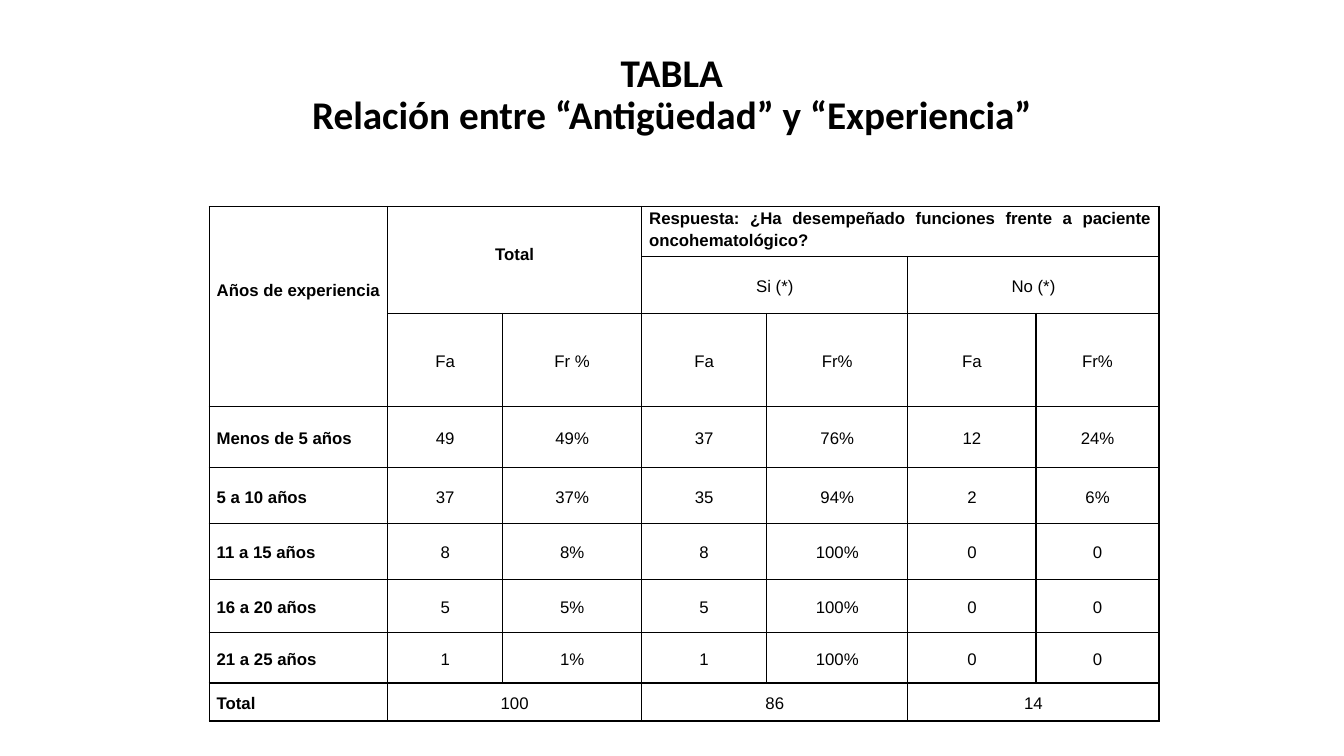
from lxml import etree
from pptx import Presentation
from pptx.dml.color import RGBColor
from pptx.enum.text import MSO_ANCHOR, PP_ALIGN
from pptx.oxml.ns import qn
from pptx.util import Cm, Pt

CENTER, JUSTIFY = PP_ALIGN.CENTER, PP_ALIGN.JUSTIFY
MIDDLE, TOP = MSO_ANCHOR.MIDDLE, MSO_ANCHOR.TOP
COLORS = {"ink": "000000"}

TITLE = "TABLA\vRelación entre “Antigüedad” y “Experiencia”"
TITLE_FONT = {"name": "Calibri", "size": Pt(28), "bold": True}
CELL_FONT = {"name": "Arial", "size": Pt(12)}
CELL_MARGINS = {"margin_left": Cm(0.19), "margin_right": Cm(0.19),
                "margin_top": 0, "margin_bottom": 0}

COLUMN_WIDTHS = [4.5, 2.9, 3.5, 3.15, 3.56, 3.23, 3.1]
ROW_HEIGHTS = [1.26, 1.44, 2.35, 1.54, 1.41, 1.4, 1.34, 1.27, 0.96]
ROWS = [
    ["Años de experiencia", "Total", "",
     "Respuesta: ¿Ha desempeñado funciones frente a paciente oncohematológico?",
     "", "", ""],
    ["", "", "", "Si (*)", "", "No (*)", ""],
    ["", "Fa", "Fr %", "Fa", "Fr%", "Fa", "Fr%"],
    ["Menos de 5 años", "49", "49%", "37", "76%", "12", "24%"],
    ["5 a 10 años", "37", "37%", "35", "94%", "2", "6%"],
    ["11 a 15 años", "8", "8%", "8", "100%", "0", "0"],
    ["16 a 20 años", "5", "5%", "5", "100%", "0", "0"],
    ["21 a 25 años", "1", "1%", "1", "100%", "0", "0"],
    ["Total", "100", "", "86", "", "14", ""],
]
# First and last (row, column) of every merged cell
MERGES = [((0, 0), (2, 0)), ((0, 1), (1, 2)), ((0, 3), (0, 6)),
          ((1, 3), (1, 4)), ((1, 5), (1, 6)),
          ((8, 1), (8, 2)), ((8, 3), (8, 4)), ((8, 5), (8, 6))]
# Headings that differ from the centred default
HEADING_FORMATS = {
    (0, 0): {"margin_bottom": Cm(0.9)},
    (0, 1): {"margin_bottom": Cm(0.36)},
    (0, 3): {"vertical_anchor": TOP},
}


def set_all(target, values):
    for attribute, value in values.items():
        setattr(target, attribute, value)


def style_text(paragraph, font, **layout):
    set_all(paragraph, layout)
    for run in paragraph.runs:
        set_all(run.font, font)
        run.font.color.rgb = RGBColor.from_string(COLORS["ink"])


def add_title(slide):
    title = slide.shapes.add_textbox(Cm(2.33), Cm(0.58), Cm(29.2), Cm(3.68))
    frame = title.text_frame
    set_all(frame, {"word_wrap": True, "vertical_anchor": MIDDLE})
    frame.text = TITLE
    style_text(frame.paragraphs[0], TITLE_FONT, alignment=CENTER, line_spacing=0.9)


def add_borders(cell):
    properties = cell._tc.get_or_add_tcPr()
    for side in ("a:lnL", "a:lnR", "a:lnT", "a:lnB"):
        border = etree.SubElement(properties, qn(side), w=str(Pt(1)))
        fill = etree.SubElement(border, qn("a:solidFill"))
        etree.SubElement(fill, qn("a:srgbClr"), val=COLORS["ink"])


def format_cell(cell, position, text):
    row, column = position
    add_borders(cell)
    cell.fill.background()
    set_all(cell, {**CELL_MARGINS, "vertical_anchor": MIDDLE,
                   **HEADING_FORMATS.get(position, {})})
    if not text:
        return
    cell.text = text
    justified = position == (0, 3) or (column == 0 and row > 0)
    style_text(cell.text_frame.paragraphs[0],
               {**CELL_FONT, "bold": row == 0 or column == 0},
               alignment=JUSTIFY if justified else CENTER,
               line_spacing=1.15, space_after=Pt(10))


def add_experience_table(slide):
    table = slide.shapes.add_table(
        len(ROWS), len(COLUMN_WIDTHS), Cm(5.27), Cm(5.2),
        Cm(sum(COLUMN_WIDTHS)), Cm(sum(ROW_HEIGHTS))).table
    set_all(table, {"first_row": False, "horz_banding": False})
    for column, width in zip(table.columns, COLUMN_WIDTHS):
        column.width = Cm(width)
    for row, height in zip(table.rows, ROW_HEIGHTS):
        row.height = Cm(height)
    for first, last in MERGES:
        table.cell(*first).merge(table.cell(*last))
    for row, texts in enumerate(ROWS):
        for column, text in enumerate(texts):
            format_cell(table.cell(row, column), (row, column), text)


def main():
    presentation = Presentation()
    set_all(presentation, {"slide_width": Cm(33.87), "slide_height": Cm(19.05)})
    slide = presentation.slides.add_slide(presentation.slide_layouts[6])
    add_title(slide)
    add_experience_table(slide)
    presentation.save("out.pptx")


if __name__ == "__main__":
    main()
